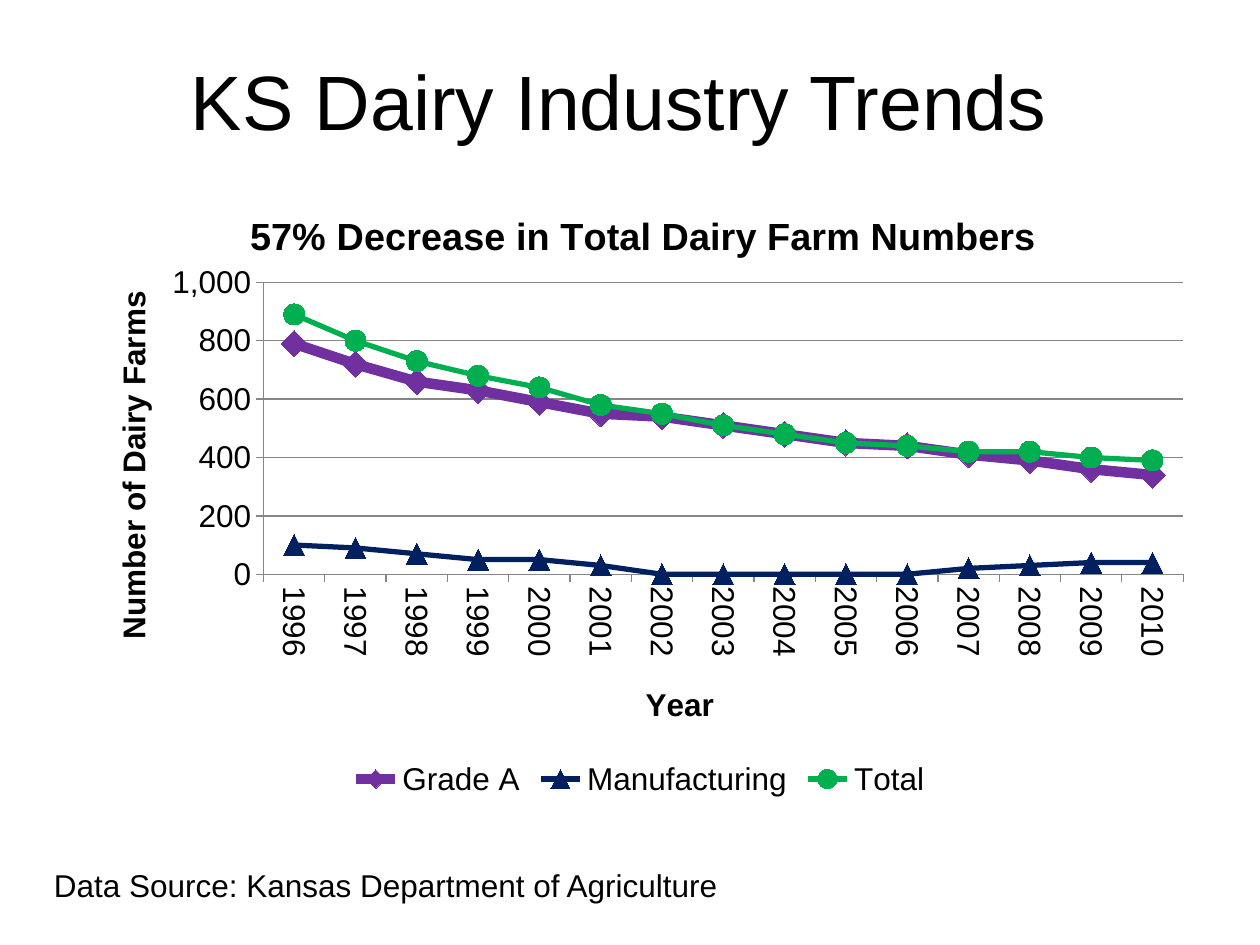
from lxml.etree import SubElement
from pptx import Presentation
from pptx.chart.data import CategoryChartData
from pptx.dml.color import RGBColor
from pptx.enum.chart import XL_CHART_TYPE as ChartType
from pptx.enum.chart import XL_LEGEND_POSITION as LegendPosition
from pptx.enum.chart import XL_MARKER_STYLE as Marker
from pptx.enum.chart import XL_TICK_MARK as TickMark
from pptx.enum.text import MSO_ANCHOR as Anchor
from pptx.enum.text import PP_ALIGN as Align
from pptx.oxml.ns import qn
from pptx.util import Inches, Pt

WIDTH, HEIGHT = Inches(10), Inches(7.5)
FONT = "Arial"
COLORS = {
    "text": "000000",
    "grid": "868686",
    "grade_a": "7030A0",
    "manufacturing": "002060",
    "total": "00B050",
}
YEARS = [str(year) for year in range(1996, 2011)]
SERIES = [
    ("Grade A", "grade_a", 6, Marker.DIAMOND, 15,
     [790, 720, 660, 630, 590, 550, 540, 510, 480, 450, 440, 410, 390, 360, 340]),
    ("Manufacturing", "manufacturing", 3, Marker.TRIANGLE, 12,
     [100, 90, 70, 50, 50, 30, 0, 0, 0, 0, 0, 20, 30, 40, 40]),
    ("Total", "total", 3, Marker.CIRCLE, 12,
     [890, 800, 730, 680, 640, 580, 550, 510, 480, 450, 440, 420, 420, 400, 390]),
]


def color(name):
    return RGBColor.from_string(COLORS[name])


def share(left, top, width, height):
    return (int(WIDTH * left), int(HEIGHT * top),
            int(WIDTH * width), int(HEIGHT * height))


def format_font(font, size, bold=False):
    font.name = FONT
    font.size = Pt(size)
    font.bold = bold
    font.color.rgb = color("text")


def write_text(frame, text, size=18, bold=False, align=None):
    paragraph = frame.paragraphs[0]
    paragraph.alignment = align
    run = paragraph.add_run()
    run.text = text
    format_font(run.font, size, bold)


def add_text(slide, text, box, anchor=Anchor.TOP, **text_format):
    frame = slide.shapes.add_textbox(*share(*box)).text_frame
    frame.word_wrap = True
    frame.vertical_anchor = anchor
    write_text(frame, text, **text_format)


def place(element, index, **values):
    for old in element.findall(qn("c:layout")):
        element.remove(old)
    layout = SubElement(element, qn("c:layout"))
    element.insert(index, layout)
    manual = SubElement(layout, qn("c:manualLayout"))
    for name, value in values.items():
        SubElement(manual, qn(f"c:{name}")).set("val", str(value))


def add_chart_title(owner, text, size, x, y):
    title = owner.chart_title if hasattr(owner, "chart_title") else owner.axis_title
    write_text(title.text_frame, text, size=size, bold=True)
    place(title._element, 1, xMode="edge", yMode="edge", x=x, y=y)


def style_axis(axis):
    format_font(axis.tick_labels.font, 18)
    axis.major_tick_mark = TickMark.OUTSIDE
    axis.format.line.color.rgb = color("grid")


def style_series(series, color_name, width, marker, size):
    series.smooth = False
    series.format.line.color.rgb = color(color_name)
    series.format.line.width = Pt(width)
    series.marker.style = marker
    series.marker.size = size
    series.marker.format.fill.solid()
    series.marker.format.fill.fore_color.rgb = color(color_name)
    series.marker.format.line.color.rgb = color(color_name)


def add_farm_chart(slide, box):
    data = CategoryChartData(number_format="#,##0")
    data.categories = YEARS
    for name, *_, values in SERIES:
        data.add_series(name, values)
    chart = slide.shapes.add_chart(ChartType.LINE_MARKERS, *share(*box), data).chart
    format_font(chart.font, 18)
    chart.plots[0].vary_by_categories = False
    for series, (_, *style, _) in zip(chart.plots[0].series, SERIES):
        style_series(series, *style)

    years, farms = chart.category_axis, chart.value_axis
    style_axis(years)
    style_axis(farms)
    body = years._element.find(qn("c:txPr")).find(qn("a:bodyPr"))
    body.set("rot", "5400000")
    body.set("vert", "horz")
    farms.minimum_scale, farms.maximum_scale, farms.major_unit = 0, 1000, 200
    farms.tick_labels.number_format = "#,##0"
    farms.tick_labels.number_format_is_linked = False
    farms.major_gridlines.format.line.color.rgb = color("grid")

    add_chart_title(chart, "57% Decrease in Total Dairy Farm Numbers", 21.6, 0.15, 0.04)
    add_chart_title(years, "Year", 18, 0.5, 0.8)
    add_chart_title(farms, "Number of Dairy Farms", 18, 0.03, 0.17)
    place(chart._chartSpace.chart.plotArea, 0, layoutTarget="inner",
          xMode="edge", yMode="edge", x=0.168, y=0.165, w=0.811, h=0.468)
    chart.has_legend = True
    chart.legend.position = LegendPosition.BOTTOM
    chart.legend.include_in_layout = False
    format_font(chart.legend.font, 18)


def main():
    presentation = Presentation()
    presentation.slide_width, presentation.slide_height = WIDTH, HEIGHT
    slide = presentation.slides.add_slide(presentation.slide_layouts[6])
    add_text(slide, "KS Dairy Industry Trends ", (0.05, 0.04, 0.9, 0.13),
             anchor=Anchor.MIDDLE, size=44, align=Align.CENTER)
    add_farm_chart(slide, (0.058, 0.19, 0.9, 0.66))
    add_text(slide, "Data Source: Kansas Department of Agriculture",
             (0.033, 0.91, 0.683, 0.056))
    presentation.save("out.pptx")


if __name__ == "__main__":
    main()
